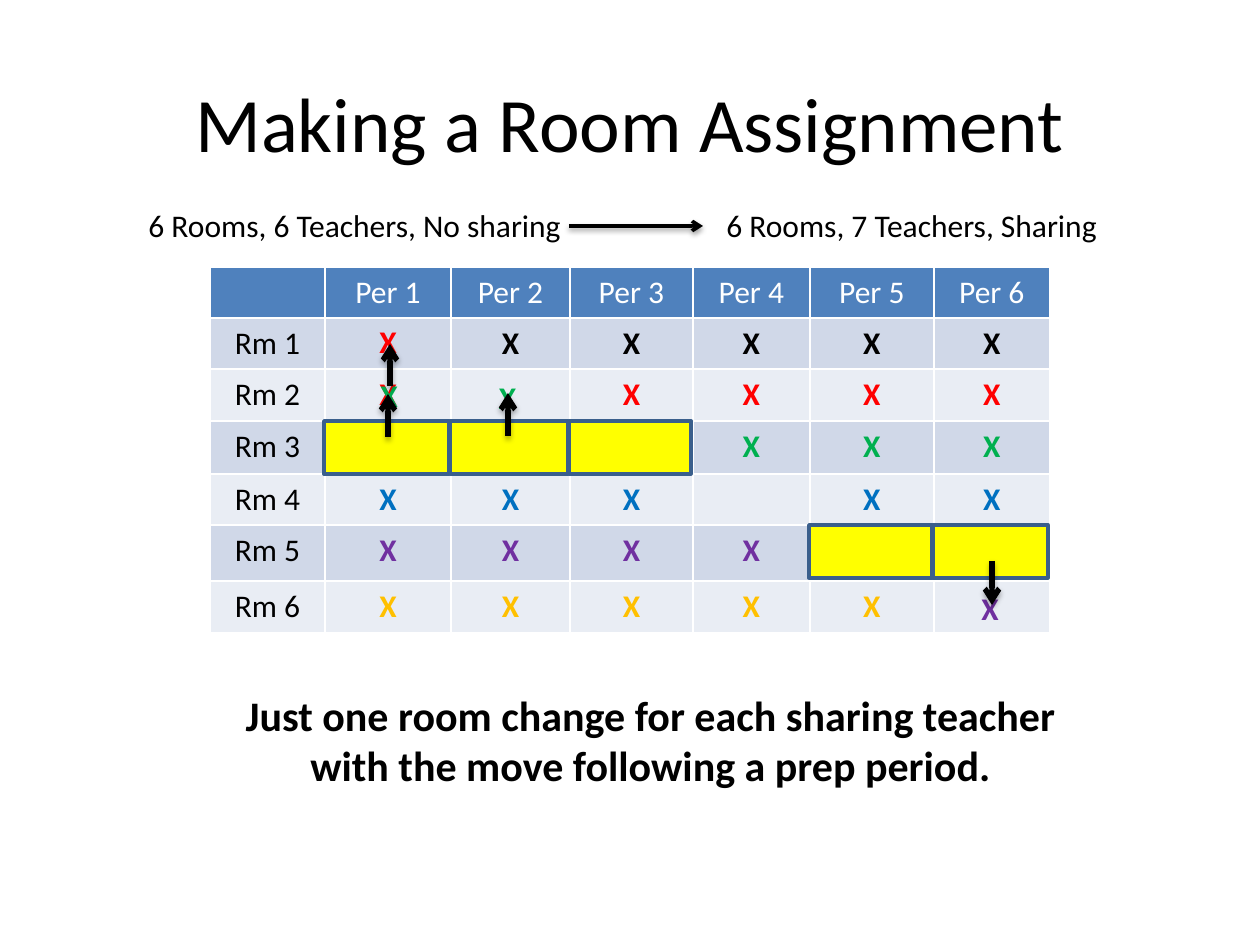
import dataclasses
import itertools

import lxml.etree
import pptx
import pptx.dml.color
import pptx.enum.shapes
import pptx.enum.text
import pptx.oxml.ns
import pptx.util

ALIGN = pptx.enum.text.PP_ALIGN
EMU_PER_PX = 914400 / 126


@dataclasses.dataclass(frozen=True)
class Theme:
    font: str = "Calibri"
    title_size: int = 44
    summary_size: int = 24
    body_size: int = 18
    black: str = "000000"
    white: str = "FFFFFF"
    header: str = "4F81BD"
    bands: tuple = ("D0D8E8", "E9EDF4")
    free_room: str = "FFFF00"
    free_room_line: str = "3A5F8C"
    red: str = "FF0000"
    green: str = "00B050"
    blue: str = "0070C0"
    purple: str = "7030A0"
    gold: str = "FFC000"


THEME = Theme()
COLUMN_WIDTHS = (115, 126, 119, 123, 117, 124, 116)
ROW_HEIGHTS = (51, 51, 52, 53, 51, 56, 51)
# Colour of each room's teacher, and the periods taught in that room
ROOMS = (
    (THEME.black, (2, 3, 4, 5, 6)),
    (THEME.red, (3, 4, 5, 6)),
    (THEME.green, (4, 5, 6)),
    (THEME.blue, (1, 2, 3, 5, 6)),
    (THEME.purple, (1, 2, 3, 4)),
    (THEME.gold, (1, 2, 3, 4, 5)),
)
# Room, period, horizontal and vertical nudge, colour
MOVED_CLASSES = (
    (2, 1, 0, -1, THEME.red),
    (1, 1, 0, -2, THEME.red),
    (2, 2, -3, 3, THEME.green),
    (2, 1, 1, 1, THEME.green),
    (6, 6, -2, 2, THEME.purple),
)
FREE_ROOMS = ((3, 1), (3, 2), (3, 3), (5, 5), (5, 6))
# Centre, start and end, measured from the corner of the schedule
MOVES = ((180, 119, 77), (178, 170, 127), (298, 169, 126), (782, 294, 338))


def px(length):
    return pptx.util.Emu(round(length * EMU_PER_PX))


def rgb(color):
    return pptx.dml.color.RGBColor.from_string(color)


def write(frame, text, size, color, bold=False, align=ALIGN.CENTER):
    frame.text = text
    para = frame.paragraphs[0]
    para.alignment = align
    for span in para.runs:
        span.font.name = THEME.font
        span.font.size = pptx.util.Pt(size)
        span.font.bold = bold
        span.font.color.rgb = rgb(color)


def add_text(shapes, box, text, size, color, bold=False, align=ALIGN.CENTER):
    frame = shapes.add_textbox(*map(px, box)).text_frame
    frame.word_wrap = True
    frame.auto_size = pptx.enum.text.MSO_AUTO_SIZE.SHAPE_TO_FIT_TEXT
    write(frame, text, size, color, bold, align)


def add_arrow(shapes, start, end, width, shadow_distance, shadow_alpha):
    arrow = shapes.add_connector(
        pptx.enum.shapes.MSO_CONNECTOR.STRAIGHT, *map(px, start + end))
    arrow.line.color.rgb = rgb(THEME.black)
    arrow.line.width = pptx.util.Pt(width)
    qn = pptx.oxml.ns.qn
    outline = arrow.line._get_or_add_ln()
    lxml.etree.SubElement(outline, qn("a:tailEnd"), type="arrow")
    effects = lxml.etree.SubElement(arrow._element.spPr, qn("a:effectLst"))
    shadow = lxml.etree.SubElement(
        effects, qn("a:outerShdw"), blurRad="40000",
        dist=str(shadow_distance), dir="5400000", rotWithShape="0")
    tint = lxml.etree.SubElement(shadow, qn("a:srgbClr"), val=THEME.black)
    lxml.etree.SubElement(tint, qn("a:alpha"), val=str(shadow_alpha * 1000))


def add_title(page, box):
    title = page.shapes.title
    title.left, title.top, title.width, title.height = map(px, box)
    title.text_frame.vertical_anchor = pptx.enum.text.MSO_ANCHOR.MIDDLE
    write(title.text_frame, "Making a Room Assignment",
          THEME.title_size, THEME.black)


def add_schedule(page, box):
    left, top, width, height = box
    table = page.shapes.add_table(
        len(ROW_HEIGHTS), len(COLUMN_WIDTHS), *map(px, box)).table
    for column, column_width in zip(table.columns, COLUMN_WIDTHS):
        column.width = px(column_width)
    for row, row_height in zip(table.rows, ROW_HEIGHTS):
        row.height = px(row_height)

    def fill_cell(room, period, text, text_color, fill, bold=False):
        cell = table.cell(room, period)
        cell.fill.solid()
        cell.fill.fore_color.rgb = rgb(fill)
        write(cell.text_frame, text, THEME.body_size, text_color, bold)

    for period in range(len(COLUMN_WIDTHS)):
        label = f"Per {period}" if period else ""
        fill_cell(0, period, label, THEME.white, THEME.header)
    for room, (color, taught) in enumerate(ROOMS, start=1):
        band = THEME.bands[(room - 1) % 2]
        fill_cell(room, 0, f"Rm {room}", THEME.black, band)
        for period in range(1, len(COLUMN_WIDTHS)):
            mark = "X" if period in taught else ""
            fill_cell(room, period, mark, color, band, bold=True)


def add_room_changes(page, box):
    """Lay the moved classes, the freed rooms and the moves over the schedule."""
    left, top = box[:2]
    column_edges = list(itertools.accumulate(COLUMN_WIDTHS, initial=left))
    row_edges = list(itertools.accumulate(ROW_HEIGHTS, initial=top))

    for room, period, across, down, color in MOVED_CLASSES:
        cell_box = (column_edges[period] + across, row_edges[room] + down,
                    COLUMN_WIDTHS[period], 53)
        add_text(page.shapes, cell_box, "X", THEME.body_size, color, bold=True)

    for room, period in FREE_ROOMS:
        cell_box = (column_edges[period] - 1, row_edges[room],
                    COLUMN_WIDTHS[period] - 1, 53)
        free = page.shapes.add_shape(
            pptx.enum.shapes.MSO_SHAPE.RECTANGLE, *map(px, cell_box))
        free.shadow.inherit = False
        free.fill.solid()
        free.fill.fore_color.rgb = rgb(THEME.free_room)
        free.line.color.rgb = rgb(THEME.free_room_line)
        free.line.width = pptx.util.Pt(2)

    for center, start, end in MOVES:
        add_arrow(page.shapes, (left + center, top + start),
                  (left + center, top + end), 3, 23000, 35)


def add_scenario(page, box):
    left, top, width, height = box
    shapes = page.shapes.add_group_shape().shapes
    add_text(shapes, (left, top, 472, height),
             "6 Rooms, 6 Teachers, No sharing",
             THEME.body_size, THEME.black, align=ALIGN.LEFT)
    middle = top + height // 2 + 1
    add_arrow(shapes, (left + 433, middle), (left + 567, middle), 2, 20000, 38)
    add_text(shapes, (left + 578, top, width - 578, height),
             "6 Rooms, 7 Teachers, Sharing",
             THEME.body_size, THEME.black, align=ALIGN.LEFT)


def add_summary(page, box):
    add_text(page.shapes, box,
             "Just one room change for each sharing teacher "
             "with the move following a prep period.",
             THEME.summary_size, THEME.black, bold=True)


def main():
    deck = pptx.Presentation()
    deck.slide_width, deck.slide_height = px(1260), px(945)
    page = deck.slides.add_slide(deck.slide_layouts[5])
    schedule_box = (210, 267, sum(COLUMN_WIDTHS), sum(ROW_HEIGHTS))
    add_title(page, (63, 43, 1134, 157))
    add_schedule(page, schedule_box)
    add_room_changes(page, schedule_box)
    add_summary(page, (220, 683, 861, 115))
    add_scenario(page, (136, 200, 996, 50))
    deck.save("out.pptx")


if __name__ == "__main__":
    main()
